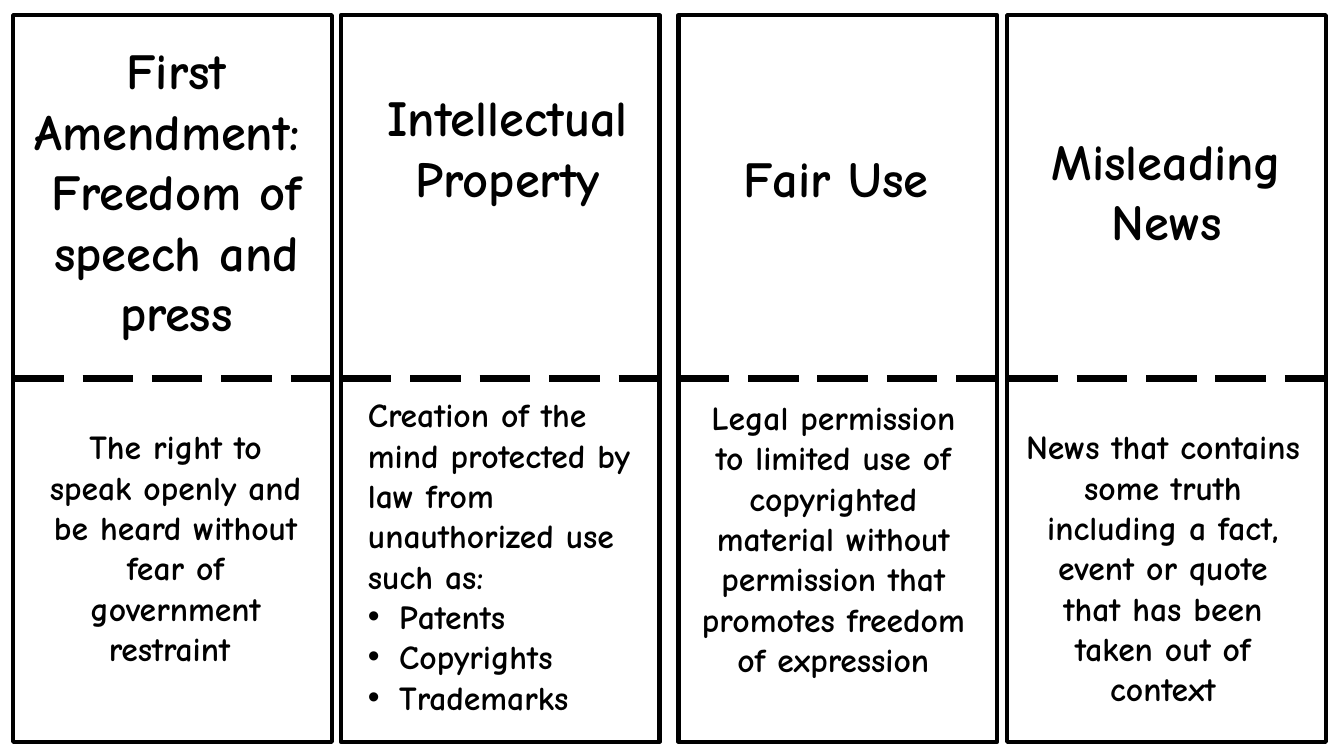
from dataclasses import dataclass

from lxml.etree import SubElement
from pptx import Presentation
from pptx.dml.color import RGBColor
from pptx.enum.dml import MSO_LINE
from pptx.enum.shapes import MSO_CONNECTOR, MSO_SHAPE
from pptx.enum.text import MSO_ANCHOR, MSO_AUTO_SIZE, PP_ALIGN
from pptx.oxml.ns import qn
from pptx.util import Inches, Pt


@dataclass(frozen=True)
class Theme:
    font: str = "Comic Neue"
    ink: RGBColor = RGBColor(0, 0, 0)
    paper: RGBColor = RGBColor(255, 255, 255)
    heading: Pt = Pt(36)
    body: Pt = Pt(24)
    border: Pt = Pt(3)
    fold: Pt = Pt(4.5)
    indent: Inches = Inches(0.31)


theme = Theme()
presentation = Presentation()
presentation.slide_width, presentation.slide_height = Inches(13.33), Inches(7.5)
slide = presentation.slides.add_slide(presentation.slide_layouts[1])
title, body = slide.placeholders


def percent_box(left, top, width, height):
    across, down = presentation.slide_width / 100, presentation.slide_height / 100
    return int(left * across), int(top * down), int(width * across), int(height * down)


def write_text(shape, box, lines, size, align):
    shape.left, shape.top, shape.width, shape.height = percent_box(*box)
    shape.element.getparent().append(shape.element)
    frame = shape.text_frame
    frame.word_wrap = True
    frame.vertical_anchor = MSO_ANCHOR.TOP
    frame.auto_size = MSO_AUTO_SIZE.SHAPE_TO_FIT_TEXT
    for index, line in enumerate(lines):
        paragraph = frame.add_paragraph() if index else frame.paragraphs[0]
        paragraph.alignment = align
        paragraph.space_before = Pt(0)
        run = paragraph.add_run()
        run.text = line
        run.font.name, run.font.size, run.font.bold = theme.font, size, True
        run.font.color.rgb = theme.ink
        properties = paragraph._p.get_or_add_pPr()
        indent = theme.indent if index else 0
        properties.set("marL", str(indent))
        properties.set("indent", str(-indent))
        if index:
            SubElement(properties, qn("a:buFont"), typeface="Arial")
            SubElement(properties, qn("a:buChar"), char="•")
        else:
            SubElement(properties, qn("a:buNone"))


CARD_TOP, CARD_WIDTH, CARD_HEIGHT = 2, 23.71, 96.13
cards = [
    (0.98, "First Amendment:  Freedom of speech and press", (0.6, 4.53, 25.06, 41.73),
     ["The right to speak openly and be heard without fear of government restraint "],
     (2.93, 55.73, 20.26, 33.6)),
    (25.36, "Intellectual Property", (26.41, 10.8, 22.73, 17.47),
     ["Creation of the mind protected by law from unauthorized use such as:",
      "Patents", "Copyrights", "Trademarks"],
     (26.63, 51.47, 21.23, 48.53)),
    (50.49, "Fair Use", (52.06, 18.8, 20.26, 9.47),
     ["Legal permission to limited use of copyrighted material without permission "
      "that promotes freedom of expression"],
     (51.16, 51.87, 21.68, 44.4)),
    (74.94, "Misleading News", (76.67, 16.53, 20.26, 17.47),
     ["News that contains some truth including a fact, event or quote "
      "that has been taken out of context"],
     (75.54, 55.73, 21.98, 39.07)),
]

for index, (left, heading, heading_box, lines, lines_box) in enumerate(cards):
    card = slide.shapes.add_shape(
        MSO_SHAPE.RECTANGLE, *percent_box(left, CARD_TOP, CARD_WIDTH, CARD_HEIGHT))
    card.shadow.inherit = False
    card.fill.solid()
    card.fill.fore_color.rgb = theme.paper
    card.line.color.rgb = theme.ink
    card.line.width = theme.border

    fold = slide.shapes.add_connector(MSO_CONNECTOR.STRAIGHT, 0, 0, 0, 0)
    fold.begin_connect(card, 1)
    fold.end_connect(card, 3)
    fold.line.color.rgb = theme.ink
    fold.line.width = theme.fold
    fold.line.dash_style = MSO_LINE.LONG_DASH
    SubElement(fold.element.spPr, qn("a:effectLst"))

    is_list = len(lines) > 1
    heading_shape = slide.shapes.add_textbox(0, 0, 0, 0) if index else title
    lines_shape = body if is_list else slide.shapes.add_textbox(0, 0, 0, 0)
    write_text(heading_shape, heading_box, [heading], theme.heading, PP_ALIGN.CENTER)
    write_text(lines_shape, lines_box, lines, theme.body,
               PP_ALIGN.LEFT if is_list else PP_ALIGN.CENTER)

presentation.save("out.pptx")
